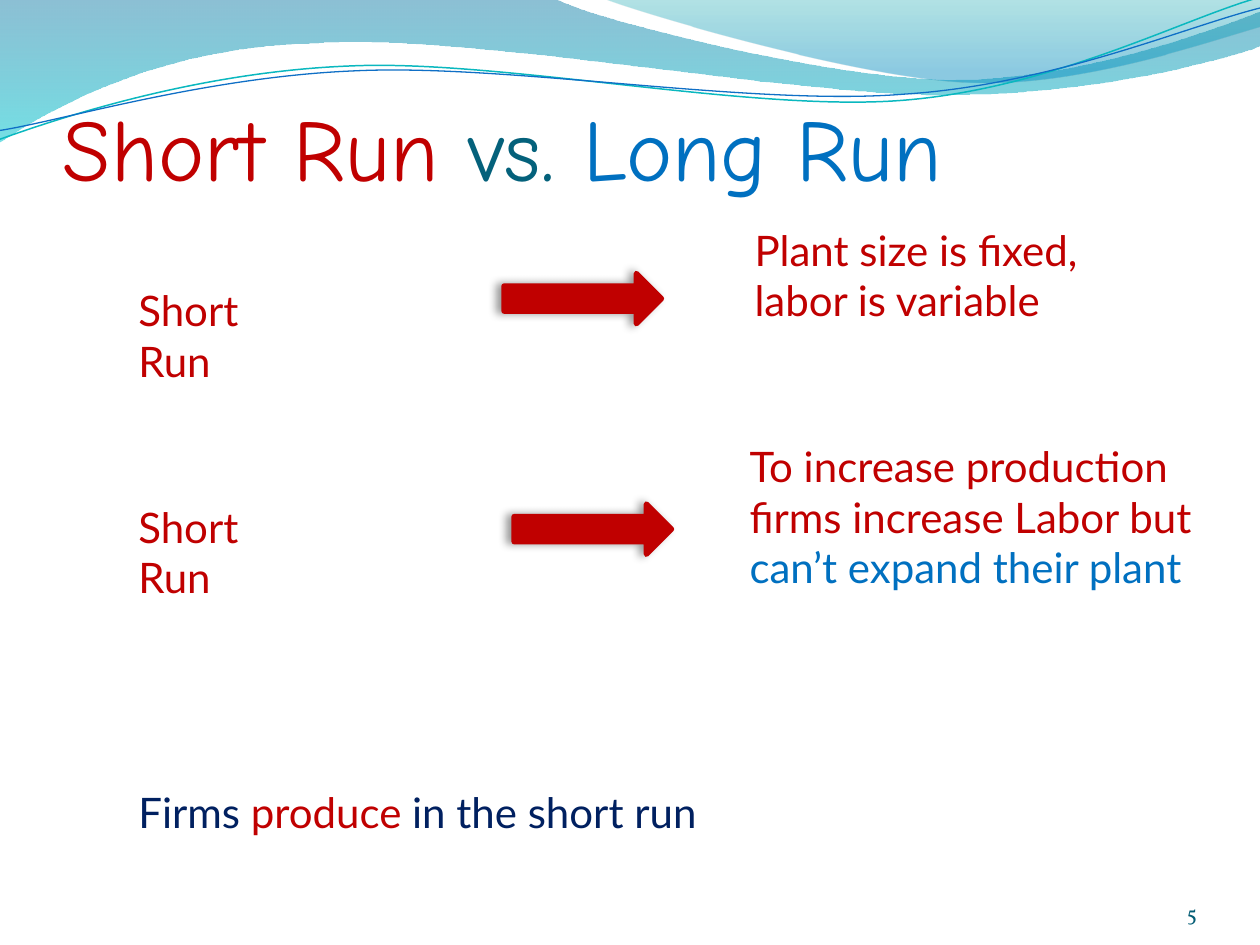
from dataclasses import dataclass
from typing import Optional

from lxml.etree import SubElement
from pptx import Presentation
from pptx.dml.color import RGBColor
from pptx.enum.shapes import MSO_SHAPE as Preset
from pptx.enum.text import MSO_ANCHOR as Anchor, MSO_AUTO_SIZE as AutoSize, PP_ALIGN as Align
from pptx.oxml.ns import qn
from pptx.util import Inches, Pt

# The slide is a grid of 10 columns by 7.5 rows
COLUMNS, ROWS = 10, 7.5
SLIDE_WIDTH, SLIDE_HEIGHT = Inches(10), Inches(7.5)

RED = RGBColor(0xC0, 0x00, 0x00)
BLUE = RGBColor(0x00, 0x70, 0xC0)
NAVY = RGBColor(0x00, 0x20, 0x60)
TEAL = RGBColor(0x04, 0x61, 0x7B)
NUMBER_TEAL = RGBColor(0x04, 0x5D, 0x75)
DEEP_BLUE = RGBColor(0x00, 0x74, 0xA1)
CYAN = RGBColor(0x00, 0xC6, 0xCF)
SEA_GREEN = RGBColor(0x00, 0xA1, 0xA9)
SKY_BLUE = RGBColor(0x00, 0x8B, 0xBF)
LINE_CYAN = RGBColor(0x0A, 0xB8, 0xBF)
LINE_BLUE = RGBColor(0x0F, 0x6F, 0xC6)

Point = tuple[float, float]


@dataclass(frozen=True)
class GradientStop:
    position: float
    color: RGBColor
    opacity: int  # percent


@dataclass(frozen=True)
class Wave:
    """An outline: each segment holds one point (line) or three (cubic curve)."""
    start: Point
    segments: list[tuple[Point, ...]]
    stops: tuple[GradientStop, ...] = ()
    line_color: Optional[RGBColor] = None
    line_width: float = 0
    rotation: float = 0


@dataclass(frozen=True)
class Label:
    column: float
    row: float
    width: float
    height: float
    runs: list[tuple[str, RGBColor]]
    font: str = "Lato"
    size: int = 24
    align: Align = Align.LEFT
    bottom: bool = False  # text sits on the bottom edge, without side margins


@dataclass(frozen=True)
class Arrow:
    column: float
    row: float
    width: float = 1.25
    height: float = 0.4


BANDS = [
    Wave((0, 0), [
        ((4.4, -0.01),),
        ((4.76, 0.17), (6.64, 0.63), (7.58, 0.63)),
        ((8.53, 0.63), (9.58, 0.26), (10, 0.09)),
        ((10.01, 0.36),),
        ((9.83, 0.44), (8.7, 0.76), (7.46, 0.75)),
        ((6.22, 0.75), (3.82, 0.28), (2.57, 0.34)),
        ((1.29, 0.36), (0.46, 0.83), (-0.01, 1.13)),
        ((0, 0),),
    ], (GradientStop(0, DEEP_BLUE, 45), GradientStop(1, CYAN, 55))),
    Wave((4.79, -0.01), [
        ((5.09, 0.11), (6.82, 0.62), (7.69, 0.65)),
        ((8.56, 0.69), (9.61, 0.32), (10, 0.21)),
        ((10, 0),),
        ((4.79, -0.01),),
    ], (GradientStop(0, SEA_GREEN, 30), GradientStop(0.8, SKY_BLUE, 45))),
]

# Thin lines, drawn level and then tilted
TILT = -2.7
STRANDS = [
    Wave((-0.02, 0.87), [
        ((0.47, 0.72), (1.58, 0.41), (2.78, 0.42)),
        ((3.96, 0.42), (5.91, 0.93), (7.12, 0.9)),
        ((8.32, 0.87), (9.4, 0.36), (10, 0.22)),
    ], line_color=LINE_CYAN, line_width=0.85, rotation=TILT),
    Wave((-0.02, 0.8), [
        ((0.46, 0.75), (1.64, 0.45), (2.83, 0.46)),
        ((4.03, 0.46), (5.96, 0.89), (7.16, 0.85)),
        ((8.35, 0.83), (9.42, 0.42), (10.02, 0.3)),
    ], line_color=LINE_BLUE, line_width=0.75, rotation=TILT),
]

CONTENT = [
    Label(0.5, 0.33, 9, 1.25,
          [("Short Run ", RED), ("vs. ", TEAL), ("Long Run", BLUE)],
          "Comic Neue", 50, bottom=True),
    Label(8.67, 6.95, 0.83, 0.4, [("5", NUMBER_TEAL)], "Vollkorn", 12, Align.RIGHT, True),
    Label(5.89, 1.73, 3.05, 0.91, [("Plant size is fixed, labor is variable", RED)]),
    Arrow(4, 2.17),
    Label(1, 2.21, 1.57, 0.5, [("Short Run", RED)]),
    Label(5.85, 3.45, 4.15, 1.31,
          [("To increase production firms increase Labor but ", RED),
           ("can’t expand their plant", BLUE)]),
    Arrow(4.08, 4),
    Label(1, 3.93, 1.57, 0.5, [("Short Run", RED)]),
    Label(1, 6.19, 7.36, 0.5,
          [("Firms ", NAVY), ("produce", RED), (" in the short run", NAVY)]),
]


def across(columns: float) -> int:
    return round(SLIDE_WIDTH * columns / COLUMNS)


def down(rows: float) -> int:
    return round(SLIDE_HEIGHT * rows / ROWS)


def bend(shape, segments: list[tuple[Point, ...]]) -> None:
    """Join the three straight steps of each curved segment into one cubic curve."""
    steps = iter(list(shape.element.spPr.iter(qn("a:lnTo"))))
    for segment in segments:
        first, *others = [next(steps) for _ in segment]
        if others:
            first.tag = qn("a:cubicBezTo")
        for step in others:
            first.append(step[0])
            step.getparent().remove(step)


def add_wave(shapes, wave: Wave) -> None:
    points = [point for segment in wave.segments for point in segment]
    builder = shapes.build_freeform(across(wave.start[0]), down(wave.start[1]))
    builder.add_line_segments([(across(x), down(y)) for x, y in points],
                              close=bool(wave.stops))
    shape = builder.convert_to_shape()
    bend(shape, wave.segments)
    shape.rotation = wave.rotation
    shape.shadow.inherit = False
    if not wave.stops:
        shape.fill.background()
        shape.line.color.rgb = wave.line_color
        shape.line.width = Pt(wave.line_width)
        return
    shape.line.fill.background()
    shape.fill.gradient()
    shape.fill.gradient_angle = 270
    for target, stop in zip(shape.fill.gradient_stops, wave.stops):
        target.position = stop.position
        target.color.rgb = stop.color
    colors = list(shape.element.spPr.iter(qn("a:srgbClr")))
    for color, stop in zip(colors, wave.stops):
        SubElement(color, qn("a:alpha"), val=str(stop.opacity * 1000))


def add_label(shapes, label: Label) -> None:
    box = shapes.add_textbox(across(label.column), down(label.row),
                             across(label.width), down(label.height))
    frame = box.text_frame
    frame.word_wrap = True
    if label.bottom:
        frame.vertical_anchor = Anchor.BOTTOM
        frame.margin_left = frame.margin_right = frame.margin_bottom = 0
    else:
        frame.auto_size = AutoSize.SHAPE_TO_FIT_TEXT
    paragraph = frame.paragraphs[0]
    paragraph.alignment = label.align
    paragraph.font.name, paragraph.font.size = label.font, Pt(label.size)
    for text, color in label.runs:
        run = paragraph.add_run()
        run.text = text
        run.font.color.rgb = color


def add_arrow(shapes, arrow: Arrow) -> None:
    shape = shapes.add_shape(Preset.RIGHT_ARROW, across(arrow.column), down(arrow.row),
                             across(arrow.width), down(arrow.height))
    shape.fill.solid()
    shape.fill.fore_color.rgb = shape.line.color.rgb = RED
    shape.line.width = Pt(3)
    # Soft shadow falling to the left
    shape.shadow.inherit = False
    effects = shape.element.spPr.find(qn("a:effectLst"))
    shadow = SubElement(effects, qn("a:outerShdw"), blurRad=str(Pt(5)), dist=str(Pt(3)),
                        dir=str(180 * 60000), rotWithShape="0")
    color = SubElement(shadow, qn("a:srgbClr"), val="000000")
    SubElement(color, qn("a:alpha"), val="40000")


presentation = Presentation()
presentation.slide_width, presentation.slide_height = SLIDE_WIDTH, SLIDE_HEIGHT
slide = presentation.slides.add_slide(presentation.slide_layouts[6])
for band in BANDS:
    add_wave(slide.shapes, band)
strand_group = slide.shapes.add_group_shape()
for strand in STRANDS:
    add_wave(strand_group.shapes, strand)
for item in CONTENT:
    (add_arrow if isinstance(item, Arrow) else add_label)(slide.shapes, item)
presentation.save("out.pptx")
